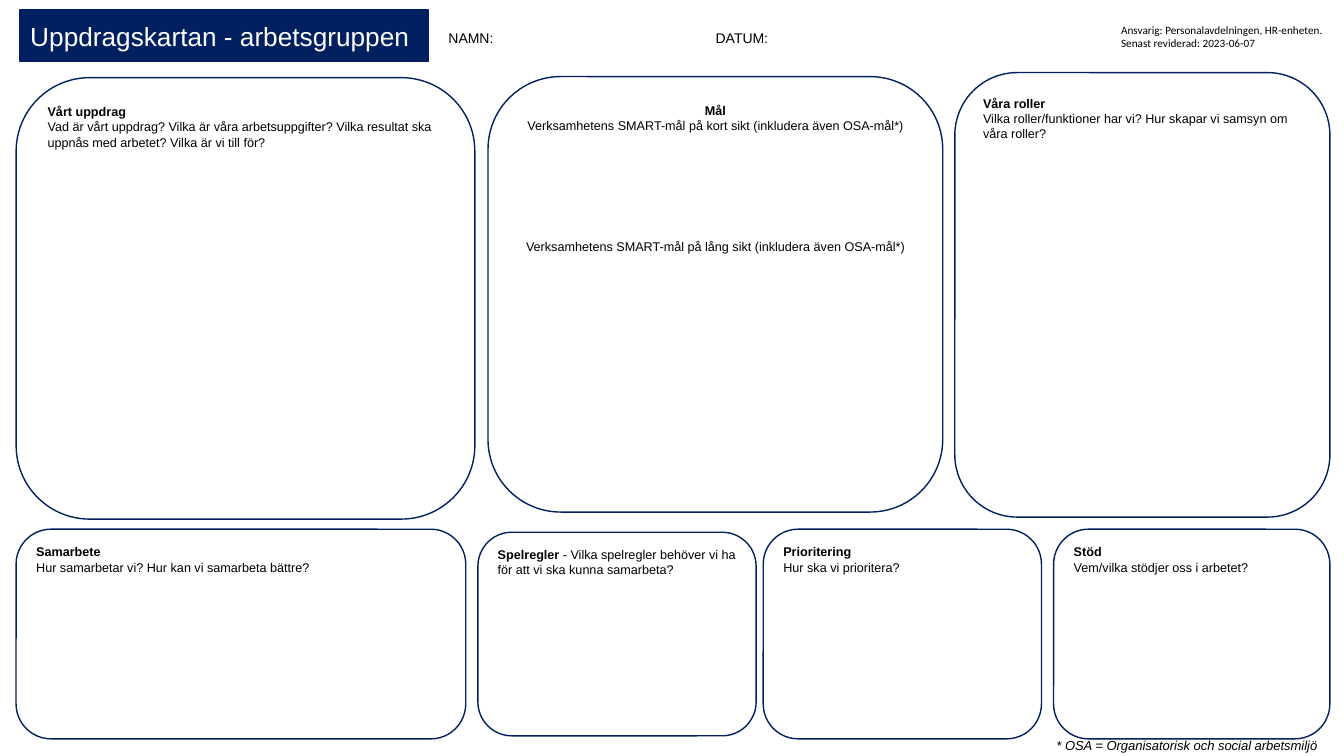
import pptx
import pptx.util
import pptx.dml.color
import pptx.enum.shapes
import pptx.enum.text
import pptx.oxml
import pptx.oxml.ns

Inches = pptx.util.Inches
Pt = pptx.util.Pt
ALIGN = pptx.enum.text.PP_ALIGN
ANCHOR = pptx.enum.text.MSO_ANCHOR
SHAPE = pptx.enum.shapes.MSO_SHAPE

COLORS = {"navy": "002060", "white": "FFFFFF", "black": "000000"}

CARDS = [
    ((0.16, 0.77, 4.55, 4.38), "Vårt uppdrag",
     "Vad är vårt uppdrag? Vilka är våra arbetsuppgifter? Vilka resultat ska "
     "uppnås med arbetet? Vilka är vi till för?"),
    ((9.47, 0.72, 3.72, 4.41), "Våra roller",
     "Vilka roller/funktioner har vi? Hur skapar vi samsyn om våra roller?"),
    ((0.16, 5.25, 4.46, 2.08), "Samarbete",
     "Hur samarbetar vi? Hur kan vi samarbeta bättre?"),
    ((10.45, 5.25, 2.74, 2.08), "Stöd", "Vem/vilka stödjer oss i arbetet?"),
    ((7.57, 5.25, 2.76, 2.08), "Prioritering", "Hur ska vi prioritera?"),
]


def rgb(name):
    return pptx.dml.color.RGBColor.from_string(COLORS[name])


def place(sp, box):
    sp.left, sp.top, sp.width, sp.height = [Inches(v) for v in box]


def paint(sp, fill, line):
    sp.fill.solid()
    sp.fill.fore_color.rgb = rgb(fill)
    if line:
        sp.line.color.rgb = rgb(line)
        sp.line.width = Pt(1)
    else:
        sp.line.fill.background()


def style(p, size, color="black", font="Arial", bold=False, align=ALIGN.LEFT):
    p.alignment = align
    for r in p.runs:
        r.font.name = font
        r.font.size = Pt(size)
        r.font.bold = bold
        r.font.color.rgb = rgb(color)


def add_box(s, kind, box, line):
    sp = s.shapes.add_shape(kind, *[Inches(v) for v in box])
    sp.shadow.inherit = False
    paint(sp, "white", line)
    sp.text_frame.word_wrap = True
    sp.text_frame.vertical_anchor = ANCHOR.TOP
    return sp.text_frame


def add_card(s, box, lines, align=ALIGN.LEFT):
    tf = add_box(s, SHAPE.ROUNDED_RECTANGLE, box, "navy")
    tf.text = "\n".join(lines)
    for i, p in enumerate(tf.paragraphs):
        style(p, 9, bold=i == 0, align=align)
    return tf


def add_label(s, box, text, size, wrap=True):
    tf = s.shapes.add_textbox(*[Inches(v) for v in box]).text_frame
    tf.word_wrap = wrap
    tf.text = text
    style(tf.paragraphs[0], size)
    return tf.paragraphs[0]


def add_tab(p, position):
    tabs = pptx.oxml.parse_xml(
        f'<a:tabLst {pptx.oxml.ns.nsdecls("a")}>'
        f'<a:tab pos="{Inches(position)}" algn="l"/></a:tabLst>')
    p._p.get_or_add_pPr().append(tabs)


def set_title(s, box, text):
    sp = s.shapes.title
    place(sp, box)
    sp._element.spPr.append(pptx.oxml.parse_xml(
        f'<a:prstGeom {pptx.oxml.ns.nsdecls("a")} prst="roundRect"><a:avLst/></a:prstGeom>'))
    paint(sp, "navy", "navy")
    tf = sp.text_frame
    tf.text = text
    tf.word_wrap = True
    tf.auto_size = pptx.enum.text.MSO_AUTO_SIZE.NONE
    tf.vertical_anchor = ANCHOR.MIDDLE
    style(tf.paragraphs[0], 18.7, "white")


def main():
    prs = pptx.Presentation()
    prs.slide_width = Inches(13.33)
    prs.slide_height = Inches(7.5)
    s = prs.slides.add_slide(prs.slide_layouts[5])

    set_title(s, (0.2, 0.1, 4.05, 0.51), "Uppdragskartan - arbetsgruppen")

    goals = add_card(s, (4.84, 0.76, 4.51, 4.32), [
        "Mål",
        "Verksamhetens SMART-mål på kort sikt (inkludera även OSA-mål*)",
        "Verksamhetens SMART-mål på lång sikt (inkludera även OSA-mål*)",
    ], ALIGN.CENTER)
    goals.paragraphs[2].space_before = Pt(75.6)

    for box, heading, question in CARDS:
        add_card(s, box, [heading, question])

    rules = add_card(s, (4.74, 5.28, 2.76, 2.02), ["Spelregler "])
    r = rules.paragraphs[0].add_run()
    r.text = "- Vilka spelregler behöver vi ha för att vi ska kunna samarbeta?"
    style(rules.paragraphs[0], 9)
    rules.paragraphs[0].runs[0].font.bold = True

    owner = add_box(s, SHAPE.RECTANGLE, (11.02, 0.18, 2.28, 0.39), None)
    owner.text = "Ansvarig: Personalavdelningen, HR-enheten. Senast reviderad: 2023-06-07"
    style(owner.paragraphs[0], 8, font="Calibri")

    fields = add_label(s, (4.35, 0.24, 4.74, 0.27), "NAMN:\tDATUM:", 10)
    add_tab(fields, 2.65)

    note = add_label(s, (10.38, 7.27, 2.86, 0.26),
                     "* OSA = Organisatorisk och social arbetsmiljö", 9.3, wrap=False)
    note.runs[0].font.italic = True

    prs.save("out.pptx")


if __name__ == "__main__":
    main()
